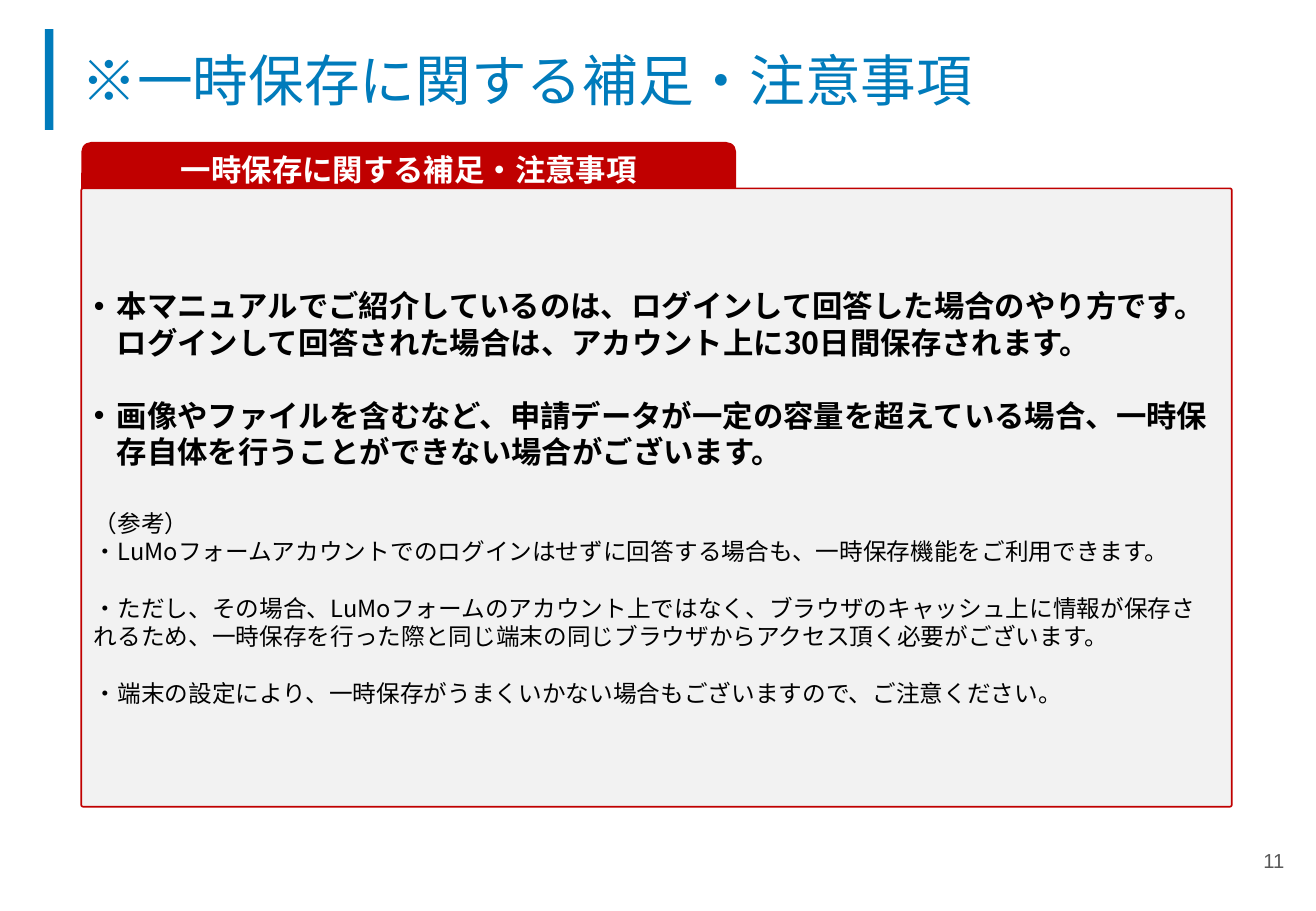
from lxml import etree
from pptx import Presentation
from pptx.dml.color import RGBColor
from pptx.enum.shapes import MSO_SHAPE
from pptx.enum.text import MSO_ANCHOR, MSO_AUTO_SIZE, PP_ALIGN
from pptx.oxml.ns import qn
from pptx.util import Cm, Pt

RECTANGLE, ROUNDED = MSO_SHAPE.RECTANGLE, MSO_SHAPE.ROUNDED_RECTANGLE
TOP, MIDDLE = MSO_ANCHOR.TOP, MSO_ANCHOR.MIDDLE
LEFT, CENTER, RIGHT = PP_ALIGN.LEFT, PP_ALIGN.CENTER, PP_ALIGN.RIGHT
NO_AUTOFIT = MSO_AUTO_SIZE.NONE

BLUE = RGBColor(0x00, 0x7B, 0xBB)
RED = RGBColor(0xC0, 0x00, 0x00)
PALE = RGBColor(0xF2, 0xF2, 0xF2)
GRAY = RGBColor(0x59, 0x59, 0x59)
BLACK = RGBColor(0, 0, 0)
WHITE = RGBColor(0xFF, 0xFF, 0xFF)

JAPANESE, LATIN = "Noto Sans CJK JP", "Arial"
LINE_PITCH = 1.2
HANGING = Cm(0.48)

TITLE = "※一時保存に関する補足・注意事項"
TAB_LABEL = "一時保存に関する補足・注意事項"
# text, is a main point, space before in points
NOTES = [
    ("本マニュアルでご紹介しているのは、ログインして回答した場合のやり方です。"
     "ログインして回答された場合は、アカウント上に30日間保存されます。", True, 0),
    ("画像やファイルを含むなど、申請データが一定の容量を超えている場合、"
     "一時保存自体を行うことができない場合がございます。", True, 21.6),
    ("（参考）", False, 23),
    ("・LuMoフォームアカウントでのログインはせずに回答する場合も、"
     "一時保存機能をご利用できます。", False, 0),
    ("・ただし、その場合、LuMoフォームのアカウント上ではなく、"
     "ブラウザのキャッシュ上に情報が保存されるため、一時保存を行った際と"
     "同じ端末の同じブラウザからアクセス頂く必要がございます。", False, 17),
    ("・端末の設定により、一時保存がうまくいかない場合もございますので、"
     "ご注意ください。", False, 17),
]


def format_para(para, size, color, bold=False, align=LEFT, font=JAPANESE):
    para.alignment = align
    for span in para.runs:
        span.font.size = Pt(size)
        span.font.bold = bold
        span.font.color.rgb = color
        span.font.name = font
        east_asian = etree.SubElement(span.font._element, qn("a:ea"))
        east_asian.set("typeface", font)


def set_frame(frame, anchor, side, edge):
    """Fix wrapping, anchor and the side and top/bottom insets."""
    frame.word_wrap = True
    frame.auto_size = NO_AUTOFIT
    frame.vertical_anchor = anchor
    frame.margin_left = frame.margin_right = side
    frame.margin_top = frame.margin_bottom = edge


def add_bullet(para):
    properties = para._p.get_or_add_pPr()
    properties.set("marL", str(HANGING))
    properties.set("indent", str(-HANGING))
    color = etree.SubElement(properties, qn("a:buClr"))
    etree.SubElement(color, qn("a:srgbClr")).set("val", str(BLACK))
    etree.SubElement(properties, qn("a:buFont")).set("typeface", LATIN)
    etree.SubElement(properties, qn("a:buChar")).set("char", "•")


def add_block(page, kind, box, fill, line=None):
    block = page.shapes.add_shape(kind, *box)
    block.shadow.inherit = False
    block.fill.solid()
    block.fill.fore_color.rgb = fill
    if line is None:
        block.line.fill.background()
    else:
        block.line.color.rgb = line
        block.line.width = Pt(1)
    return block


def add_heading(page, left, top, width, height):
    add_block(page, RECTANGLE, (left, top, Cm(0.18), height), BLUE)
    title = page.shapes.title
    title.left, title.top = left + Cm(0.46), top
    title.width, title.height = width - Cm(0.46), height
    title.text_frame.text = TITLE
    set_frame(title.text_frame, MIDDLE, Cm(0.3), Cm(0.3))
    format_para(title.text_frame.paragraphs[0], 33, BLUE)


def add_notes_panel(page, left, top, width, height):
    """Place a red tab whose foot is covered by the panel of notes."""
    tab = add_block(page, ROUNDED, (left, top, Cm(13.69), Cm(1.24)), RED)
    tab.text_frame.text = TAB_LABEL
    set_frame(tab.text_frame, TOP, Cm(0.25), Cm(0.13))
    label = tab.text_frame.paragraphs[0]
    label.line_spacing = Pt(18 * LINE_PITCH)
    format_para(label, 18, WHITE, True, CENTER)

    overlap = Cm(0.97)
    panel = add_block(page, ROUNDED,
                      (left, top + overlap, width, height - overlap), PALE, RED)
    panel.adjustments[0] = 0.003
    frame = panel.text_frame
    frame.text = "\n".join(text for text, _, _ in NOTES)
    set_frame(frame, MIDDLE, Cm(0.25), Cm(0.13))
    for para, (_, main, gap) in zip(frame.paragraphs, NOTES):
        size = 18 if main else 14
        if main:
            add_bullet(para)
        para.line_spacing = Pt(size * LINE_PITCH)
        if gap:
            para.space_before = Pt(gap)
        format_para(para, size, BLACK, main)


def add_page_number(page, left, top, width, height):
    box = page.shapes.add_textbox(left, top, width, height)
    box.text_frame.text = "11"
    set_frame(box.text_frame, MIDDLE, Cm(0.3), Cm(0.3))
    format_para(box.text_frame.paragraphs[0], 12, GRAY, align=RIGHT, font=LATIN)


def main():
    deck = Presentation()
    deck.slide_width, deck.slide_height = Cm(27.51), Cm(19.05)
    page = deck.slides.add_slide(deck.slide_layouts[5])
    add_heading(page, Cm(0.94), Cm(0.61), Cm(26.09), Cm(2.11))
    add_notes_panel(page, Cm(1.7), Cm(2.97), Cm(24.05), Cm(13.9))
    add_page_number(page, Cm(25.5), Cm(17.27), Cm(1.65), Cm(1.45))
    deck.save("out.pptx")


if __name__ == "__main__":
    main()
